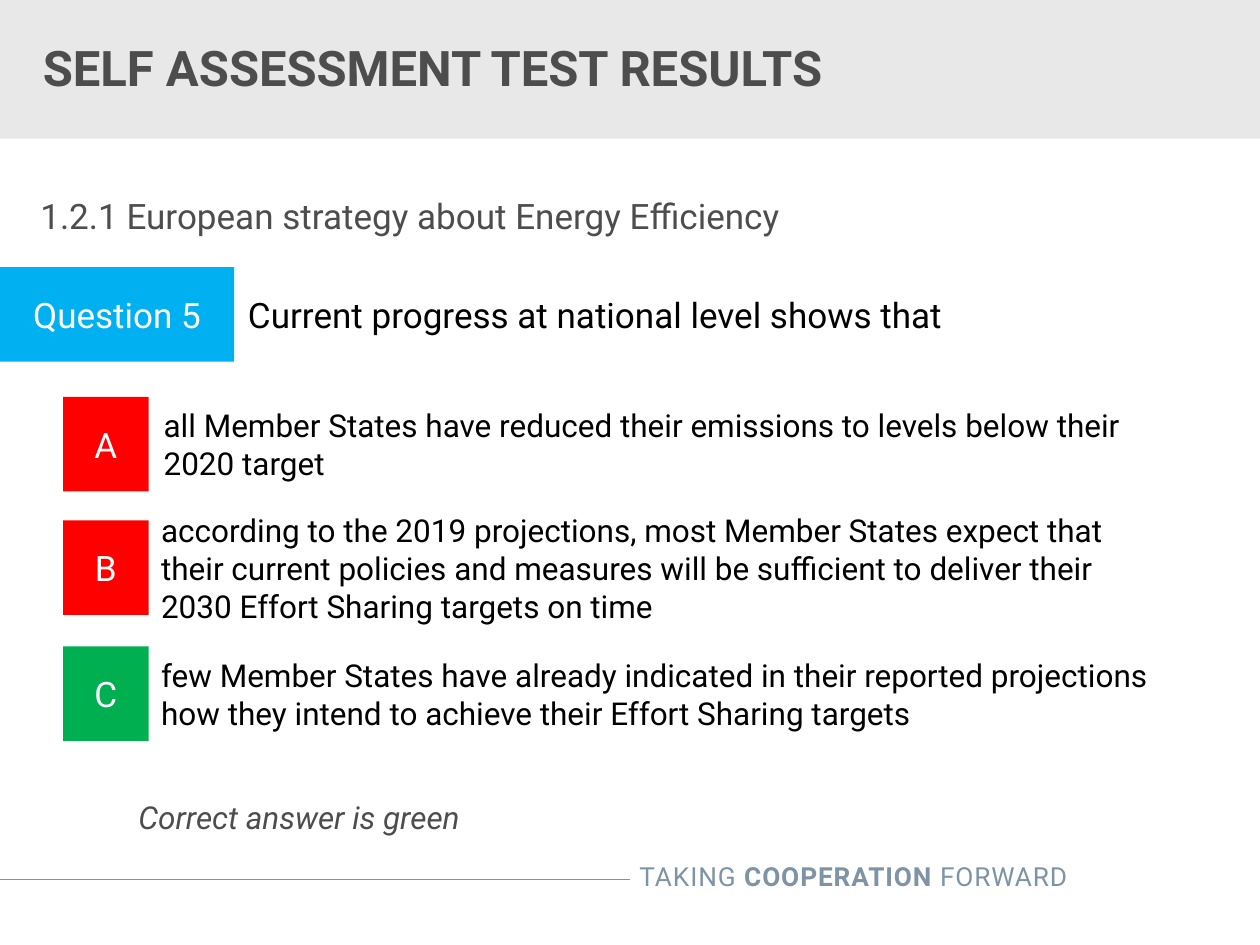
from lxml import etree
from pptx import Presentation
from pptx.dml.color import RGBColor
from pptx.enum.shapes import MSO_CONNECTOR, MSO_SHAPE
from pptx.enum.text import MSO_ANCHOR, MSO_AUTO_SIZE, PP_ALIGN
from pptx.oxml.ns import qn
from pptx.util import Inches, Pt

FONT = "Roboto"
COLORS = {
    "band": "E8E8E8",
    "heading": "4D4D4E",
    "tagline": "7E93A5",
    "question": "00B0F0",
    "wrong": "FF0000",
    "correct": "00B050",
    "text": "000000",
    "label": "FFFFFF",
}
ROW_HEIGHT = 0.75
ANSWERS = [
    ("A", 3.15, 1.2, "wrong",
     "all Member States have reduced their emissions to levels below their 2020 target"),
    ("B", 4.13, 1.18, "wrong",
     "according to the 2019 projections, most Member States expect that their current "
     "policies and measures will be sufficient to deliver their 2030 Effort Sharing "
     "targets on time"),
    ("C", 5.13, 1.18, "correct",
     "few Member States have already indicated in their reported projections how they "
     "intend to achieve their Effort Sharing targets"),
]


def rgb(name):
    return RGBColor.from_string(COLORS[name])


def style_run(run, size, color, bold=False, italic=False):
    run.font.name = FONT
    run.font.size = Pt(size)
    run.font.color.rgb = rgb(color)
    run.font.bold = bold
    run.font.italic = italic


def write(shape, text, size, color, align=PP_ALIGN.LEFT, anchor=MSO_ANCHOR.MIDDLE,
          bold=False, italic=False):
    frame = shape.text_frame
    frame.text = text
    frame.word_wrap = True
    frame.auto_size = MSO_AUTO_SIZE.NONE
    frame.vertical_anchor = anchor
    paragraph = frame.paragraphs[0]
    paragraph.alignment = align
    style_run(paragraph.runs[0], size, color, bold, italic)
    return paragraph


def place(shape, left, top, width, height):
    shape.left, shape.top = Inches(left), Inches(top)
    shape.width, shape.height = Inches(width), Inches(height)


def add_box(slide, left, top, width, height, color):
    box = slide.shapes.add_shape(MSO_SHAPE.RECTANGLE, Inches(left), Inches(top),
                                 Inches(width), Inches(height))
    box.shadow.inherit = False
    box.fill.solid()
    box.fill.fore_color.rgb = rgb(color)
    box.line.fill.background()
    return box


def add_label(slide, text, left, top, width, color):
    label = add_box(slide, left, top, width, ROW_HEIGHT, color)
    write(label, text, 20, "label", PP_ALIGN.CENTER)


def add_text(slide, text, left, top, width, height, size, color, italic=False):
    box = slide.shapes.add_textbox(Inches(left), Inches(top), Inches(width), Inches(height))
    write(box, text, size, color, italic=italic)


def add_header(slide):
    band = add_box(slide, 0, 0, 10, 1.1, "band")
    slide.shapes.title._element.addprevious(band._element)
    title = slide.shapes.title
    place(title, 0, 0.16, 7.2, 0.75)
    paragraph = write(title, "SELF ASSESSMENT TEST RESULTS", 28, "heading", bold=True)
    paragraph._p.get_or_add_pPr().set("marL", str(Inches(0.24)))


def add_topic(slide):
    topic = slide.placeholders[1]
    place(topic, 0.32, 1.54, 9.36, 0.34)
    paragraph = write(topic, "1.2.1 European strategy about Energy Efficiency", 20,
                      "heading", anchor=MSO_ANCHOR.TOP)
    frame = topic.text_frame
    frame.margin_left = frame.margin_right = frame.margin_top = frame.margin_bottom = 0
    paragraph.space_before = Pt(0)
    properties = paragraph._p.get_or_add_pPr()
    properties.set("marL", "0")
    properties.set("indent", "0")
    etree.SubElement(properties, qn("a:buNone"))


def add_footer(slide):
    rule = slide.shapes.add_connector(MSO_CONNECTOR.STRAIGHT, Inches(0), Inches(6.98),
                                      Inches(5), Inches(6.98))
    rule.line.color.rgb = rgb("tagline")
    rule.line.width = Pt(0.75)
    etree.SubElement(rule._element.spPr, qn("a:effectLst"))
    tagline = slide.shapes.add_textbox(Inches(3.88), Inches(6.78), Inches(4.69), Inches(0.35))
    tagline.text_frame.word_wrap = True
    paragraph = tagline.text_frame.paragraphs[0]
    paragraph.alignment = PP_ALIGN.RIGHT
    for text, bold in (("TAKING ", False), ("COOPERATION", True), (" FORWARD", False)):
        run = paragraph.add_run()
        run.text = text
        style_run(run, 15, "tagline", bold)
        run._r.get_or_add_rPr().set("spc", "50")


def main():
    deck = Presentation()
    deck.slide_width, deck.slide_height = Inches(10), Inches(7.5)
    slide = deck.slides.add_slide(deck.slide_layouts[1])
    add_header(slide)
    add_topic(slide)
    add_label(slide, "Question 5", 0, 2.12, 1.86, "question")
    add_text(slide, "Current progress at national level shows that",
             1.87, 2.12, 8.13, ROW_HEIGHT, 20, "text")
    for letter, top, text_left, result, answer in ANSWERS:
        add_label(slide, letter, 0.5, top, 0.68, result)
        add_text(slide, answer, text_left, top, 8.15, ROW_HEIGHT, 18, "text")
    add_text(slide, "Correct answer is green", 1, 6.28, 4, 0.4, 18, "heading", italic=True)
    add_footer(slide)
    deck.save("out.pptx")


if __name__ == "__main__":
    main()
